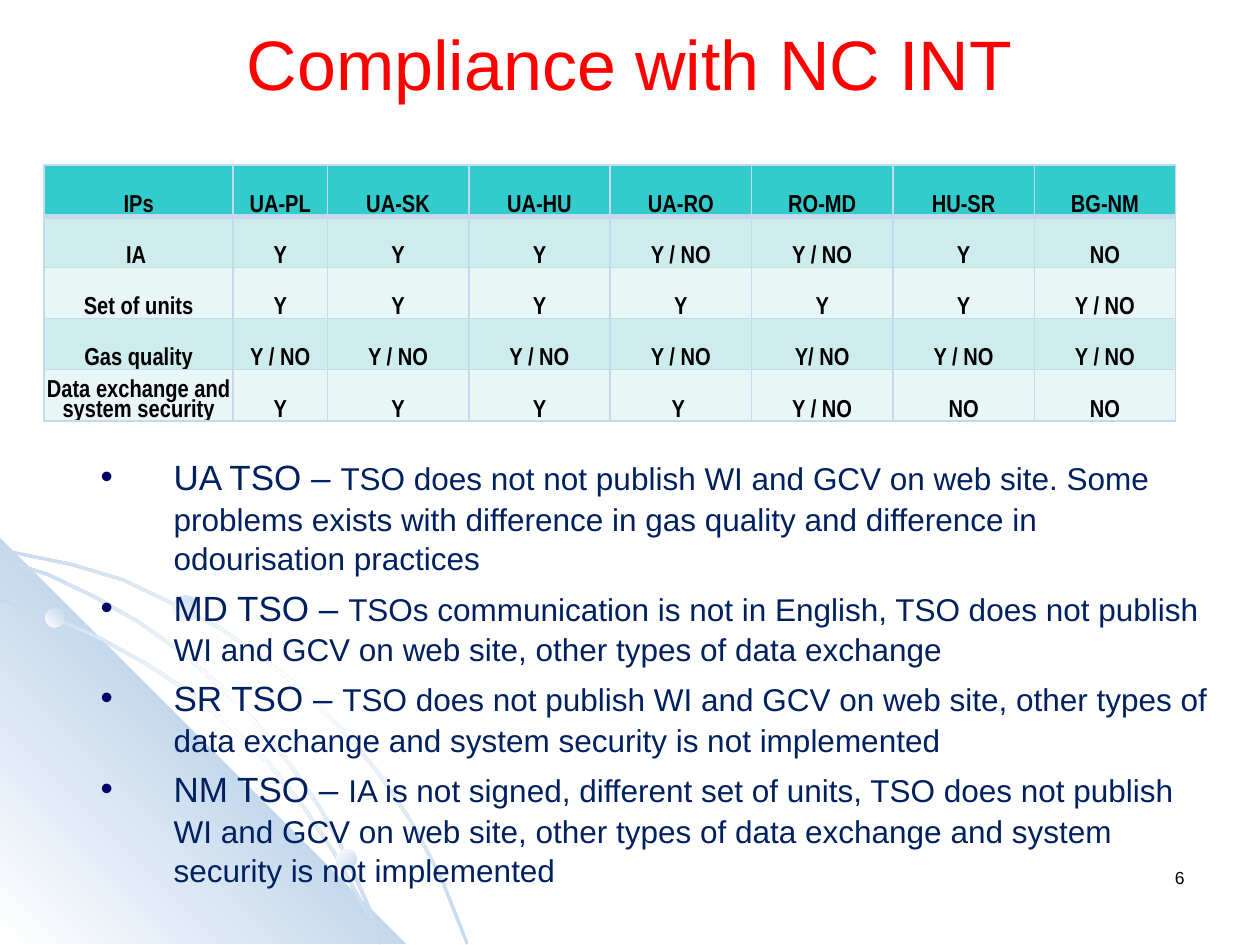
import math
import pptx
import pptx.dml.color
import pptx.enum.shapes
import pptx.enum.text
import pptx.oxml
import pptx.oxml.ns
import pptx.util

Cm, Pt = pptx.util.Cm, pptx.util.Pt
ALIGN = pptx.enum.text.PP_ALIGN
ANCHOR = pptx.enum.text.MSO_ANCHOR
OVAL = pptx.enum.shapes.MSO_SHAPE.OVAL
NS = pptx.oxml.ns.nsdecls("a")

PALE, WHITE, NAVY = "C5D9ED", "FFFFFF", "002060"
HEAD, BANDS = "33CCCC", ("CEECEC", "E8F6F6")

TITLE = "Compliance with NC INT"
ROWS = [
    ["IPs", "UA-PL", "UA-SK", "UA-HU", "UA-RO", "RO-MD", "HU-SR", "BG-NM"],
    ["IA ", "Y", "Y", "Y", "Y / NO", "Y / NO", "Y", "NO"],
    ["Set of units", "Y", "Y", "Y", "Y", "Y", "Y", "Y / NO"],
    ["Gas quality", "Y / NO", "Y / NO", "Y / NO", "Y / NO", "Y/ NO",
     "Y / NO", "Y / NO"],
    ["Data exchange and system security", "Y", "Y", "Y", "Y ", "Y / NO",
     "NO", "NO"],
]
WIDTHS = [3.81, 1.9] + [2.85] * 6
HEIGHT = 1.03
NOTES = [
    ("UA TSO – ", "TSO does not not publish WI and GCV on web site. Some "
     "problems exists with difference in gas quality and difference in "
     "odourisation practices"),
    ("MD TSO – ", "TSOs communication is not in English, TSO does not "
     "publish WI and GCV on web site, other types of data exchange"),
    ("SR TSO – ", "TSO does not publish WI and GCV on web site, other types "
     "of data exchange and system security is not implemented"),
    ("NM TSO – ", "IA is not signed, different set of units, TSO does not "
     "publish WI and GCV on web site, other types of data exchange and "
     "system security is not implemented"),
]

# Upper edges of the curved ribbons, in cm
ARC_TOP = [(0, 11.05), (0.71, 11.2), (1.45, 11.35), (2.49, 11.66),
           (3.45, 12.12), (4.42, 12.62), (5.31, 13.23), (6.15, 13.92),
           (6.91, 14.68), (7.62, 15.52), (8.26, 16.46), (8.61, 17.09),
           (8.94, 17.73), (9.19, 18.36), (9.45, 19.02)]
ARC_LOW = [(0, 12.06), (1.04, 12.4), (2.01, 12.83), (2.97, 13.36),
           (3.86, 13.94), (4.67, 14.63), (5.46, 15.39), (6.15, 16.26),
           (6.76, 17.17), (7.26, 18.08), (7.52, 18.54), (7.7, 19.02)]
ARC_MID = [(0, 11.23), (0.99, 11.56), (1.93, 12.01), (2.82, 12.52),
           (3.66, 13.11), (4.44, 13.79), (5.18, 14.55), (5.82, 15.32),
           (6.45, 16.23), (6.83, 16.89), (7.16, 17.6), (7.47, 18.29),
           (7.7, 19.02)]
WEDGE = [(0, 10.85), (8.18, 19.03), (0, 19.03)]
THICK = 0.06
# left, top, size, angle
DOTS = [(0.91, 12.27, 0.38, 315), (6.78, 17.12, 0.41, 45),
        (3.48, 12.01, 0.53, 315)]


def tint(hue):
    return pptx.dml.color.RGBColor.from_string(hue)


def shade(shape, hues, angle):
    """Fill with evenly spaced gradient stops, without line or shadow."""
    shape.shadow.inherit = False
    shape.line.fill.background()
    stops = "".join(
        f'<a:gs pos="{100000 * i // (len(hues) - 1)}">'
        f'<a:srgbClr val="{hue}"/></a:gs>' for i, hue in enumerate(hues))
    grad = pptx.oxml.parse_xml(
        f'<a:gradFill {NS} rotWithShape="1"><a:gsLst>{stops}</a:gsLst>'
        f'<a:lin ang="{angle * 60000}" scaled="0"/></a:gradFill>')
    shape._element.spPr.find(pptx.oxml.ns.qn("a:prstGeom")
                             if shape.shape_type == 1
                             else pptx.oxml.ns.qn("a:custGeom")).addnext(grad)


def outline(slide, points, hues, angle):
    pen = slide.shapes.build_freeform(Cm(points[0][0]), Cm(points[0][1]))
    pen.add_line_segments([(Cm(x), Cm(y)) for x, y in points[1:]], close=True)
    shade(pen.convert_to_shape(), hues, angle)


def ribbon(slide, edge):
    """Draw a thin band whose other edge lies THICK below the given one."""
    under = []
    for i, (x, y) in enumerate(edge):
        (ax, ay), (bx, by) = edge[max(i - 1, 0)], edge[min(i + 1, len(edge) - 1)]
        turn = math.atan2(by - ay, bx - ax)
        under.append((max(0, x - THICK * math.sin(turn)),
                      y + THICK * math.cos(turn)))
    outline(slide, edge + under[::-1], (PALE, WHITE, PALE), 45)


def write(para, text, size, hue, face="Arial", bold=False):
    run = para.add_run()
    run.text = text
    run.font.size, run.font.name, run.font.bold = Pt(size), face, bold
    run.font.color.rgb = tint(hue)


def frame(slide, left, top, width, height, anchor=ANCHOR.TOP):
    box = slide.shapes.add_textbox(Cm(left), Cm(top), Cm(width), Cm(height))
    box.text_frame.word_wrap = True
    box.text_frame.vertical_anchor = anchor
    return box.text_frame


def bullet(para):
    props = para._p.get_or_add_pPr()
    props.set("marL", str(Cm(2.74)))
    props.set("indent", str(Cm(-1.47)))
    for xml in (f'<a:buClr {NS}><a:srgbClr val="000066"/></a:buClr>',
                f'<a:buFont {NS} typeface="Arial"/>',
                f'<a:buChar {NS} char="•"/>'):
        props.append(pptx.oxml.parse_xml(xml))


def style(cell, text, hue, base):
    """Write one cell; base is the width of its bottom border in points."""
    cell.margin_left = cell.margin_right = cell.margin_top = Cm(0.03)
    cell.margin_bottom = 0
    cell.vertical_anchor = ANCHOR.BOTTOM
    para = cell.text_frame.paragraphs[0]
    para.alignment = ALIGN.CENTER
    para.line_spacing = 0.85
    write(para, text, 14, "000000", "Arial Narrow", True)
    props = cell._tc.get_or_add_tcPr()
    for side, width in (("L", 1), ("R", 1), ("T", 1), ("B", base)):
        props.append(pptx.oxml.parse_xml(
            f'<a:ln{side} {NS} w="{Pt(width)}"><a:solidFill>'
            f'<a:srgbClr val="{PALE}"/></a:solidFill></a:ln{side}>'))
    cell.fill.solid()
    cell.fill.fore_color.rgb = tint(hue)


def grid(slide):
    table = slide.shapes.add_table(
        len(ROWS), len(WIDTHS), Cm(0.89), Cm(3.33),
        Cm(sum(WIDTHS)), Cm(HEIGHT * len(ROWS))).table
    for col, width in zip(table.columns, WIDTHS):
        col.width = Cm(width)
    for r, row in enumerate(ROWS):
        table.rows[r].height = Cm(HEIGHT)
        hue = BANDS[(r - 1) % 2] if r else HEAD
        for c, text in enumerate(row):
            style(table.cell(r, c), text, hue, 1 if r else 3)


def main():
    deck = pptx.Presentation()
    deck.slide_width, deck.slide_height = Cm(25.4), Cm(19.05)
    slide = deck.slides.add_slide(deck.slide_layouts[6])

    ribbon(slide, ARC_TOP)
    outline(slide, WEDGE, (WHITE, PALE, WHITE), 315)
    ribbon(slide, ARC_LOW)
    ribbon(slide, ARC_MID)
    for left, top, size, angle in DOTS:
        dot = slide.shapes.add_shape(OVAL, Cm(left), Cm(top), Cm(size), Cm(size))
        shade(dot, (WHITE, PALE), angle)

    para = frame(slide, 18.21, 17.35, 5.92, 1.27).paragraphs[0]
    para.alignment = ALIGN.RIGHT
    write(para, "6", 10, "000000")

    para = frame(slide, 0.69, 0, 24, 2.51, ANCHOR.MIDDLE).paragraphs[0]
    para.alignment = ALIGN.CENTER
    write(para, TITLE, 40, "FF0000")

    body = frame(slide, 0.51, 9.02, 24.21, 9.52)
    for i, (who, what) in enumerate(NOTES):
        para = body.add_paragraph() if i else body.paragraphs[0]
        para.line_spacing = 1.05
        para.space_before = Pt(4 if i else 0)
        bullet(para)
        write(para, who, 20, NAVY)
        write(para, what, 18, NAVY)

    grid(slide)
    deck.save("out.pptx")


if __name__ == "__main__":
    main()
